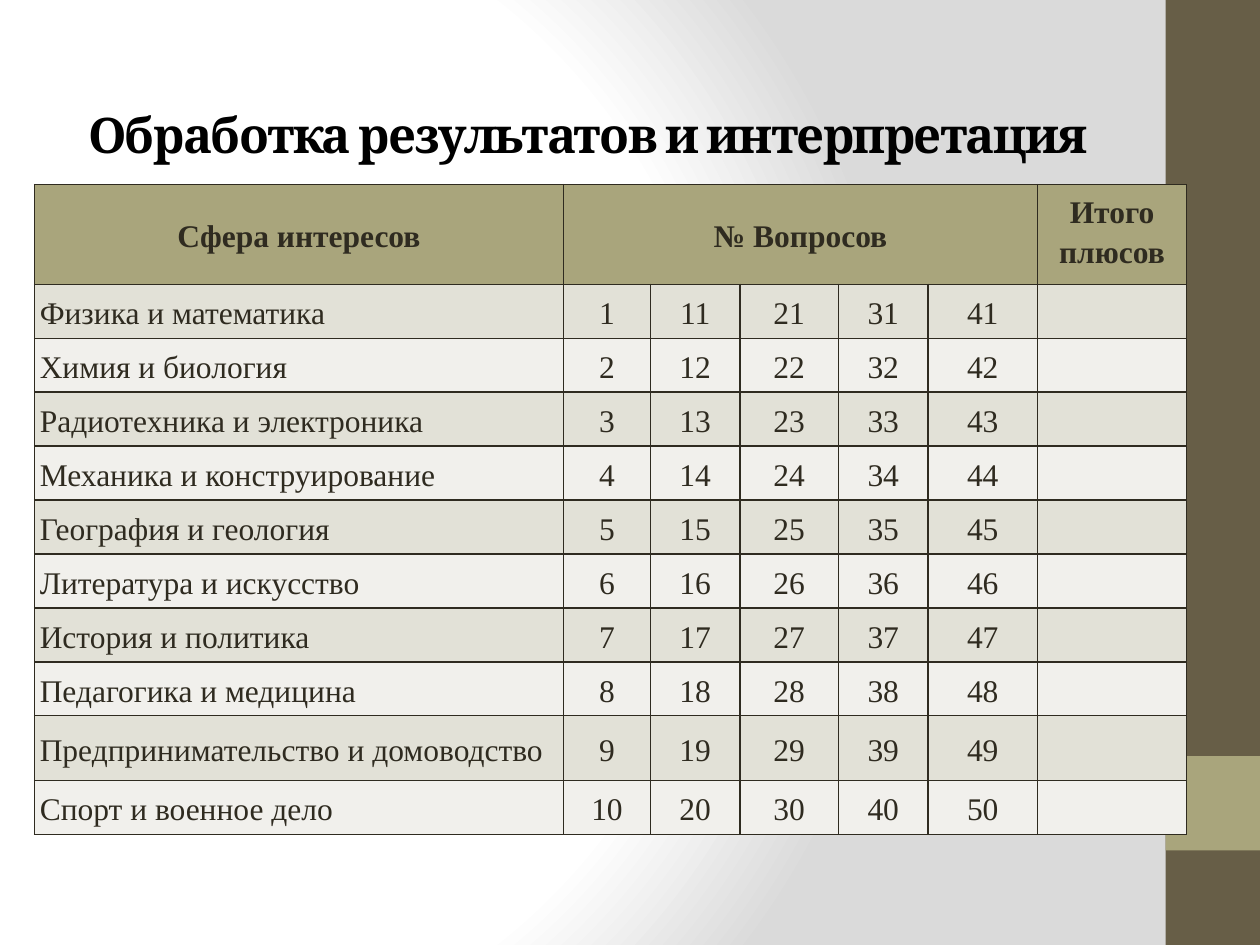
from lxml import etree
from pptx import Presentation
from pptx.dml.color import RGBColor
from pptx.enum.shapes import MSO_SHAPE as Shape
from pptx.enum.text import MSO_ANCHOR as Anchor, PP_ALIGN as Align
from pptx.oxml import parse_xml
from pptx.oxml.ns import nsdecls, qn
from pptx.util import Pt

COLORS = {
    "white": "FFFFFF", "gray": "DADADA", "brown": "675E47", "olive": "A9A57C",
    "black": "000000", "ink": "2F2B20", "band_dark": "E2E1D7", "band_light": "F1F0EC",
}
INTERESTS = [
    "Физика и математика", "Химия и биология", "Радиотехника и электроника",
    "Механика и конструирование", "География и геология", "Литература и искусство",
    "История и политика", "Педагогика и медицина",
    "Предпринимательство и домоводство", "Спорт и военное дело",
]
COLUMN_WIDTHS = [302.25, 49.75, 51, 56.5, 51, 62.75, 85]
HEADER_HEIGHT, ROW_HEIGHT, TALL_ROW_HEIGHT = 57, 30.75, 37
TALL_ROW = 9
QUESTION_COLUMNS = 5


def color(name):
    """Return the named colour."""
    return RGBColor.from_string(COLORS[name])


def write_text(frame, text, font="Times New Roman", size=18, ink="ink", bold=False,
               align=Align.CENTER, spacing=None):
    """Write one formatted paragraph into a text frame."""
    paragraph = frame.paragraphs[0]
    paragraph.alignment = align
    paragraph.line_spacing = 1.15
    run = paragraph.add_run()
    run.text = text
    run.font.name, run.font.size, run.font.bold = font, Pt(size), bold
    run.font.color.rgb = color(ink)
    if spacing is not None:
        run.font._element.set("spc", str(round(spacing * 100)))


def paint_background(slide):
    """Fill the background with a circular gradient."""
    slide.background.fill.solid()
    properties = slide.element.find(".//" + qn("p:bgPr"))
    stops = "".join(
        f'<a:gs pos="{position * 1000}"><a:srgbClr val="{COLORS[name]}"/></a:gs>'
        for position, name in [(0, "white"), (75, "white"), (100, "gray")])
    gradient = parse_xml(
        f'<a:gradFill {nsdecls("a")} rotWithShape="1"><a:gsLst>{stops}</a:gsLst>'
        '<a:path path="circle"><a:fillToRect l="20000" t="50000" r="100000" b="50000"/>'
        '</a:path></a:gradFill>')
    properties.replace(properties.find(qn("a:solidFill")), gradient)


def add_block(slide, left, top, width, height, fill):
    """Add a plain rectangle."""
    shape = slide.shapes.add_shape(Shape.RECTANGLE, Pt(left), Pt(top), Pt(width), Pt(height))
    shape.shadow.inherit = False
    shape.fill.solid()
    shape.fill.fore_color.rgb = color(fill)
    shape.line.fill.background()


def add_side_band(slide, left, top, width, height):
    """Add the side band with its square accent."""
    add_block(slide, left, top, width, height, "brown")
    add_block(slide, left, top + height * 0.8, width, width, "olive")


def add_title(slide, left, top, width, height):
    """Add the slide title."""
    frame = slide.shapes.add_textbox(Pt(left), Pt(top), Pt(width), Pt(height)).text_frame
    frame.word_wrap = True
    frame.vertical_anchor = Anchor.BOTTOM
    frame.margin_bottom = Pt(18)
    write_text(frame, "Обработка результатов и интерпретация", font="Cambria",
               size=28, ink="black", bold=True, spacing=-1)


def style_cell(cell, fill):
    """Set the margins, borders and fill of a cell."""
    cell.margin_left = cell.margin_right = cell.margin_top = cell.margin_bottom = Pt(3)
    cell.vertical_anchor = Anchor.MIDDLE
    properties = cell._tc.get_or_add_tcPr()
    for side in ("lnL", "lnR", "lnT", "lnB"):
        line = etree.SubElement(properties, qn(f"a:{side}"), w=str(Pt(1)))
        solid = etree.SubElement(line, qn("a:solidFill"))
        etree.SubElement(solid, qn("a:srgbClr"), val=COLORS["ink"])
    cell.fill.solid()
    cell.fill.fore_color.rgb = color(fill)


def add_interest_table(slide, left, top):
    """Add the table of interests and question numbers."""
    heights = [HEADER_HEIGHT] + [ROW_HEIGHT] * len(INTERESTS)
    heights[TALL_ROW] = TALL_ROW_HEIGHT
    table = slide.shapes.add_table(
        len(heights), len(COLUMN_WIDTHS), Pt(left), Pt(top),
        Pt(sum(COLUMN_WIDTHS)), Pt(sum(heights))).table
    for column, width in zip(table.columns, COLUMN_WIDTHS):
        column.width = Pt(width)
    for index, height in enumerate(heights):
        table.rows[index].height = Pt(height)
        fill = "olive" if index == 0 else ("band_light", "band_dark")[index % 2]
        for cell in table.rows[index].cells:
            style_cell(cell, fill)

    table.cell(0, 1).merge(table.cell(0, QUESTION_COLUMNS))
    total_column = QUESTION_COLUMNS + 1
    headings = {0: "Сфера интересов", 1: "№ Вопросов", total_column: "Итого плюсов"}
    for column, heading in headings.items():
        write_text(table.cell(0, column).text_frame, heading, bold=True)
    table.cell(0, total_column).vertical_anchor = Anchor.TOP

    for row, interest in enumerate(INTERESTS, start=1):
        write_text(table.cell(row, 0).text_frame, interest, align=Align.LEFT)
        for column in range(QUESTION_COLUMNS):
            number = row + column * len(INTERESTS)
            write_text(table.cell(row, column + 1).text_frame, str(number))


def main():
    """Build and save the presentation."""
    presentation = Presentation()
    presentation.slide_width, presentation.slide_height = Pt(720), Pt(540)
    slide = presentation.slides.add_slide(presentation.slide_layouts[6])
    paint_background(slide)
    add_side_band(slide, 666, 0, 54, 540)
    add_title(slide, 36, 21.6, 600, 90)
    add_interest_table(slide, 19.75, 105.5)
    presentation.save("out.pptx")


if __name__ == "__main__":
    main()
